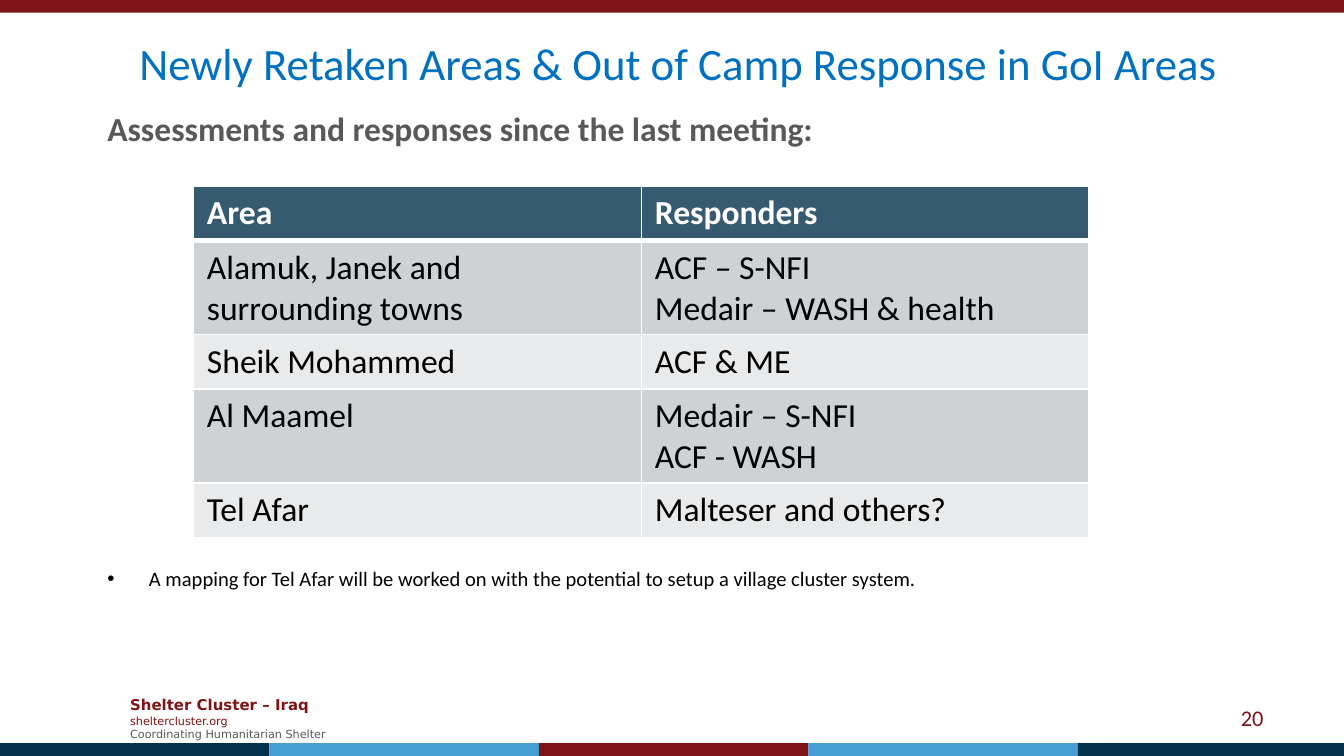
import pptx
import pptx.dml.color
import pptx.enum.shapes
import pptx.enum.text
import pptx.oxml
import pptx.oxml.ns
import pptx.util

RGBColor = pptx.dml.color.RGBColor
ALIGN = pptx.enum.text.PP_ALIGN
ANCHOR = pptx.enum.text.MSO_ANCHOR

MAROON = RGBColor(0x7F, 0x14, 0x16)
NAVY = RGBColor(0x04, 0x31, 0x4C)
SKY = RGBColor(0x45, 0x9F, 0xD5)
BLUE = RGBColor(0x00, 0x70, 0xC0)
GREY = RGBColor(0x59, 0x59, 0x59)
BLACK = RGBColor(0x00, 0x00, 0x00)
WHITE = RGBColor(0xFF, 0xFF, 0xFF)
HEADER = RGBColor(0x36, 0x5A, 0x70)
STRIPES = (RGBColor(0xCE, 0xD2, 0xD5), RGBColor(0xE8, 0xEA, 0xEB))

COLUMNS, ROWS = 100, 56.25
UNIT = pptx.util.Inches(0.1)

RESPONSES = [
    ("Area", "Responders"),
    ("Alamuk, Janek and surrounding towns", "ACF – S-NFI\nMedair – WASH & health"),
    ("Sheik Mohammed", "ACF & ME"),
    ("Al Maamel", "Medair – S-NFI\nACF - WASH"),
    ("Tel Afar", "Malteser and others?"),
]


def grid(*lengths):
    return [pptx.util.Emu(round(length * UNIT)) for length in lengths]


class SlideBuilder:
    font = "Calibri"

    def __init__(self, deck):
        self.slide = deck.slides.add_slide(deck.slide_layouts.get_by_name("Title Only"))

    def style(self, para, size, color, bold=False, font=None, align=ALIGN.LEFT):
        para.alignment = align
        para.font.name = font or self.font
        para.font.size = pptx.util.Pt(size)
        para.font.bold = bold
        para.font.color.rgb = color

    def title(self, text, area, size, color):
        box = self.slide.shapes.title
        box.left, box.top, box.width, box.height = grid(*area)
        frame = box.text_frame
        frame.text = text
        frame.word_wrap = True
        frame.auto_size = pptx.enum.text.MSO_AUTO_SIZE.NONE
        frame.vertical_anchor = ANCHOR.TOP
        frame.paragraphs[0].line_spacing = 1.0
        self.style(frame.paragraphs[0], size, color, align=ALIGN.CENTER)

    def text(self, lines, area, anchor=ANCHOR.TOP, bullet=False):
        frame = self.slide.shapes.add_textbox(*grid(*area)).text_frame
        frame.word_wrap = True
        frame.vertical_anchor = anchor
        frame.text = "\n".join(text for text, _ in lines)
        for para, (_, style) in zip(frame.paragraphs, lines):
            if bullet:
                self.bullet(para)
            self.style(para, **style)

    def bullet(self, para):
        properties = para._p.get_or_add_pPr()
        indent = pptx.util.Inches(0.31)
        properties.set("marL", str(indent))
        properties.set("indent", str(-indent))
        namespace = pptx.oxml.ns.nsdecls("a")
        properties.append(pptx.oxml.parse_xml(f'<a:buFont {namespace} typeface="Arial"/>'))
        properties.append(pptx.oxml.parse_xml(f'<a:buChar {namespace} char="•"/>'))

    def band(self, area, color):
        shape = self.slide.shapes.add_shape(
            pptx.enum.shapes.MSO_SHAPE.RECTANGLE, *grid(*area))
        shape.shadow.inherit = False
        shape.fill.solid()
        shape.fill.fore_color.rgb = color
        shape.line.fill.background()

    def borders(self, cell, top, bottom):
        properties = cell._tc.get_or_add_tcPr()
        for side, points in (("L", 1), ("R", 1), ("T", top), ("B", bottom)):
            properties.append(pptx.oxml.parse_xml(
                f'<a:ln{side} {pptx.oxml.ns.nsdecls("a")} w="{pptx.util.Pt(points)}">'
                f'<a:solidFill><a:srgbClr val="{WHITE}"/></a:solidFill></a:ln{side}>'))

    def table(self, data, area, heights, size):
        table = self.slide.shapes.add_table(
            len(data), len(data[0]), *grid(*area)).table
        for index, (values, height) in enumerate(zip(data, heights)):
            table.rows[index].height = grid(height)[0]
            is_header = index == 0
            fill = HEADER if is_header else STRIPES[(index - 1) % 2]
            for column, value in enumerate(values):
                cell = table.cell(index, column)
                cell.text = value
                self.borders(cell, 3 if index == 1 else 1, 3 if is_header else 1)
                cell.fill.solid()
                cell.fill.fore_color.rgb = fill
                for para in cell.text_frame.paragraphs:
                    self.style(para, size, WHITE if is_header else BLACK, is_header)


def main():
    deck = pptx.Presentation()
    deck.slide_width, deck.slide_height = grid(COLUMNS, ROWS)
    page = SlideBuilder(deck)

    footer = {"font": "DejaVu Sans", "size": 6}
    page.text([
        ("Shelter Cluster – Iraq", {**footer, "size": 8, "color": MAROON, "bold": True}),
        ("sheltercluster.org", {**footer, "color": MAROON}),
        ("Coordinating Humanitarian Shelter", {**footer, "color": GREY}),
    ], (8.7, 51.25, 17.3, 4.4), ANCHOR.MIDDLE)

    page.band((0, 0, COLUMNS, 0.95), MAROON)
    band_step = 20.05
    for index, color in enumerate((NAVY, SKY, MAROON, SKY, NAVY)):
        left = index * band_step
        page.band((left, ROWS - 0.95, min(band_step, COLUMNS - left), 0.95), color)

    page.text([("20", {"size": 12, "color": MAROON, "align": ALIGN.RIGHT})],
              (71.7, 51.9, 23.3, 3), ANCHOR.MIDDLE)
    page.title("Newly Retaken Areas & Out of Camp Response in GoI Areas",
               (5.9, 2.15, 89.1, 5), 24, BLUE)
    page.text([("Assessments and responses since the last meeting:",
                {"size": 18, "color": GREY, "bold": True})], (7, 7.55, 81.4, 4))
    page.table(RESPONSES, (14.4, 13.85, 66.65, 26.15), (4.05, 7, 4.05, 7, 4.05), 18)
    page.text([("A mapping for Tel Afar will be worked on with the potential "
                "to setup a village cluster system.", {"size": 11, "color": BLACK})],
              (7, 41.65, 77.3, 2.9), bullet=True)

    deck.save("out.pptx")


if __name__ == "__main__":
    main()
